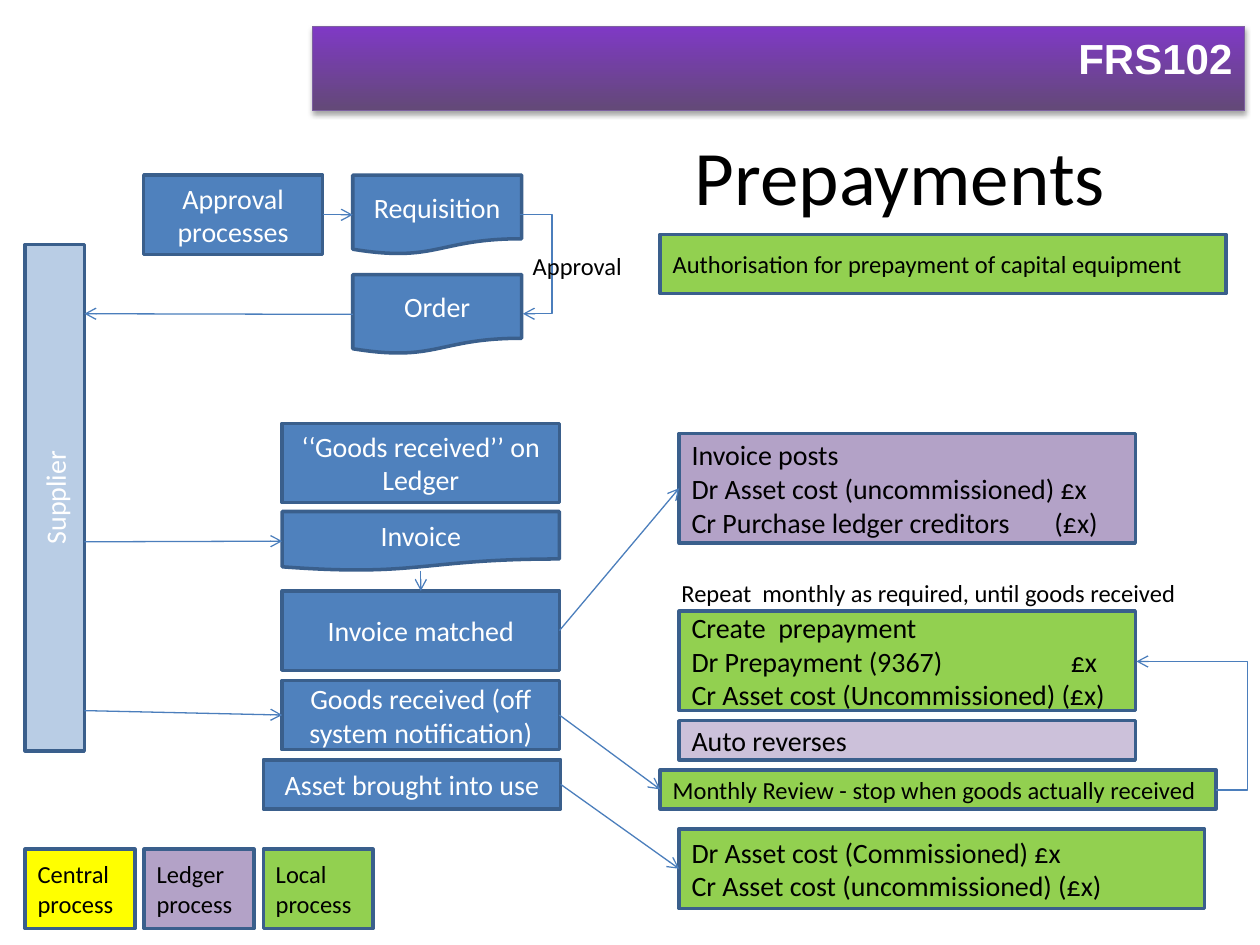
from lxml import etree
from pptx import Presentation
from pptx.dml.color import RGBColor
from pptx.enum import shapes, text
from pptx.oxml import parse_xml
from pptx.oxml.ns import nsdecls, qn
from pptx.util import Inches, Pt

COLORS = {
    "blue": "4F81BD", "pale_blue": "B9CDE5", "outline": "3A5F8C", "arrow": "4B7EBC",
    "green": "92D050", "purple": "B3A2C7", "pale_purple": "CCC1DA", "yellow": "FFFF00",
    "band_top": "7F39C5", "band_bottom": "634977", "band_line": "7D60A0",
    "white": "FFFFFF", "black": "000000",
}
BOX = shapes.MSO_SHAPE.FLOWCHART_PROCESS
DOC = shapes.MSO_SHAPE.FLOWCHART_DOCUMENT
RECT = shapes.MSO_SHAPE.RECTANGLE
LEFT, CENTER, RIGHT = text.PP_ALIGN.LEFT, text.PP_ALIGN.CENTER, text.PP_ALIGN.RIGHT
TOP, MIDDLE = text.MSO_ANCHOR.TOP, text.MSO_ANCHOR.MIDDLE
SIDE = {"top": 0, "left": 1, "bottom": 2, "right": 3}


def rgb(name):
    return RGBColor.from_string(COLORS[name])


def inches(values):
    return [Inches(v) for v in values]


def write(sp, content, size=16, color="black", align=LEFT, anchor=MIDDLE,
          font="Calibri", bold=False, tab=None):
    """Fill a shape with one paragraph per line; tab is a stop in inches."""
    tf = sp.text_frame
    tf.word_wrap = True
    tf.vertical_anchor = anchor
    for i, line in enumerate(content.split("\n")):
        p = tf.paragraphs[0] if i == 0 else tf.add_paragraph()
        p.alignment = align
        if tab and "\t" in line:
            stops = etree.SubElement(p._p.get_or_add_pPr(), qn("a:tabLst"))
            etree.SubElement(stops, qn("a:tab"), pos=str(Inches(tab)), algn="l")
        r = p.add_run()
        r.text = line
        r.font.size = Pt(size)
        r.font.name = font
        r.font.bold = bold
        r.font.color.rgb = rgb(color)


def add_box(slide, kind, at, fill, content, **fmt):
    sp = slide.shapes.add_shape(kind, *inches(at))
    sp.shadow.inherit = False
    sp.fill.solid()
    sp.fill.fore_color.rgb = rgb(fill)
    sp.line.color.rgb = rgb("outline")
    sp.line.width = Pt(2)
    write(sp, content, **fmt)
    return sp


def add_step(slide, kind, at, content, fill="blue"):
    return add_box(slide, kind, at, fill, content, color="white", align=CENTER)


def add_label(slide, at, content):
    sp = slide.shapes.add_textbox(*inches(at))
    write(sp, content, size=14, anchor=TOP)


def add_arrow(slide, start, end, bend=None):
    """Each end is an (x, y) point or a (shape, side) joint; bend is the elbow's x."""
    kind = shapes.MSO_CONNECTOR.ELBOW if bend else shapes.MSO_CONNECTOR.STRAIGHT
    joints = [isinstance(e[1], str) for e in (start, end)]
    points = [(0, 0) if joint else e for joint, e in zip(joints, (start, end))]
    c = slide.shapes.add_connector(kind, *inches(points[0] + points[1]))
    if joints[0]:
        c.begin_connect(start[0], SIDE[start[1]])
    if joints[1]:
        c.end_connect(end[0], SIDE[end[1]])
    c.line.color.rgb = rgb("arrow")
    c.line.width = Pt(0.75)
    etree.SubElement(c.line._get_or_add_ln(), qn("a:tailEnd"), type="arrow")
    pr = c._element.spPr
    etree.SubElement(pr, qn("a:effectLst"))
    if bend:
        ratio = (bend - start[0]) / (end[0] - start[0])
        guides = pr.find(qn("a:prstGeom")).get_or_add_avLst()
        etree.SubElement(guides, qn("a:gd"), name="adj1",
                         fmla=f"val {round(ratio * 100000)}")


def add_band(slide):
    sp = slide.shapes.add_shape(RECT, *inches((2.48, 0.21, 7.4, 0.67)))
    sp.fill.gradient()
    sp.fill.gradient_angle = 90
    for stop, name in zip(sp.fill.gradient_stops, ("band_bottom", "band_top")):
        stop.color.rgb = rgb(name)
    sp.line.color.rgb = rgb("band_line")
    sp.line.width = Pt(0.75)
    sp._element.spPr.append(parse_xml(
        f'<a:effectLst {nsdecls("a")}><a:outerShdw blurRad="{Pt(3.1)}" dist="{Pt(1.8)}" '
        'dir="5400000" rotWithShape="0"><a:srgbClr val="000000"><a:alpha val="35000"/>'
        '</a:srgbClr></a:outerShdw></a:effectLst>'))
    write(sp, "FRS102", size=24, color="white", align=RIGHT, anchor=TOP,
          font="Arial", bold=True)


def add_title(slide):
    title = slide.shapes.title
    title.left, title.top, title.width, title.height = inches((4.29, 0.92, 5.71, 0.93))
    write(title, "Prepayments", size=44, align=CENTER)


def add_purchasing(slide):
    """Draw the purchasing steps on the left and return those that lead to the right."""
    approval = add_step(slide, RECT, (1.14, 1.39, 1.42, 0.63), "Approval processes")
    requisition = add_step(slide, DOC, (2.8, 1.39, 1.34, 0.63), "Requisition")
    order = add_step(slide, DOC, (2.8, 2.18, 1.34, 0.63), "Order")
    supplier = add_step(slide, RECT, (0.2, 1.94, 0.47, 4.02), "Supplier", "pale_blue")
    supplier.text_frame._txBody.bodyPr.set("vert", "vert270")
    add_step(slide, BOX, (2.24, 3.36, 2.2, 0.63), "‘‘Goods received’’ on Ledger")
    invoice = add_step(slide, DOC, (2.24, 4.06, 2.2, 0.47), "Invoice")
    matched = add_step(slide, BOX, (2.24, 4.69, 2.2, 0.63), "Invoice matched")
    received = add_step(slide, BOX, (2.24, 5.4, 2.2, 0.55),
                        "Goods received (off system notification)")
    in_use = add_step(slide, BOX, (2.09, 6.03, 2.36, 0.39), "Asset brought into use")

    add_arrow(slide, (approval, "right"), (requisition, "left"))
    add_arrow(slide, (4.13, 1.7), (4.15, 2.49), bend=4.38)
    add_label(slide, (4.13, 1.94, 1.1, 0.34), "Approval")
    add_arrow(slide, (order, "left"), (0.67, 2.49))
    add_arrow(slide, (0.67, 4.3), (invoice, "left"))
    add_arrow(slide, (0.67, 5.64), (received, "left"))
    add_arrow(slide, (invoice, "bottom"), (matched, "top"))
    return matched, received, in_use


def add_accounting(slide, matched, received, in_use):
    add_box(slide, BOX, (5.24, 1.86, 4.49, 0.47), "green",
            "Authorisation for prepayment of capital equipment", size=14)
    posting = add_box(slide, BOX, (5.39, 3.44, 3.62, 0.87), "purple",
                      "Invoice posts\nDr Asset cost (uncommissioned) £x\n"
                      "Cr Purchase ledger creditors\t(£x)", tab=2.88)
    add_box(slide, BOX, (5.39, 4.85, 3.62, 0.79), "green",
            "Create  prepayment\nDr Prepayment (9367)\t£x\n"
            "Cr Asset cost (Uncommissioned) (£x)", tab=3.01)
    add_box(slide, BOX, (5.39, 5.72, 3.62, 0.31), "pale_purple", "Auto reverses")
    review = add_box(slide, BOX, (5.24, 6.11, 4.41, 0.31), "green",
                     "Monthly Review - stop when goods actually received", size=14)
    commissioned = add_box(slide, BOX, (5.39, 6.58, 4.17, 0.63), "green",
                           "Dr Asset cost (Commissioned) £x\n"
                           "Cr Asset cost (uncommissioned) (£x)")
    add_label(slide, (5.31, 4.54, 4.33, 0.34),
              "Repeat  monthly as required, until goods received")
    for step, target in ((matched, posting), (received, review), (in_use, commissioned)):
        add_arrow(slide, (step, "right"), (target, "left"))
    add_arrow(slide, (9.65, 6.27), (9.02, 5.25), bend=9.9)


def add_legend(slide):
    entries = (("Central", "yellow"), ("Ledger", "purple"), ("Local", "green"))
    for i, (owner, fill) in enumerate(entries):
        add_box(slide, BOX, (0.2 + 0.945 * i, 6.74, 0.87, 0.63), fill,
                f"{owner} process", size=14)


def main():
    prs = Presentation()
    prs.slide_width, prs.slide_height = Inches(10), Inches(7.5)
    slide = prs.slides.add_slide(prs.slide_layouts.get_by_name("Title Only"))
    add_band(slide)
    add_title(slide)
    add_accounting(slide, *add_purchasing(slide))
    add_legend(slide)
    prs.save("out.pptx")


if __name__ == "__main__":
    main()
